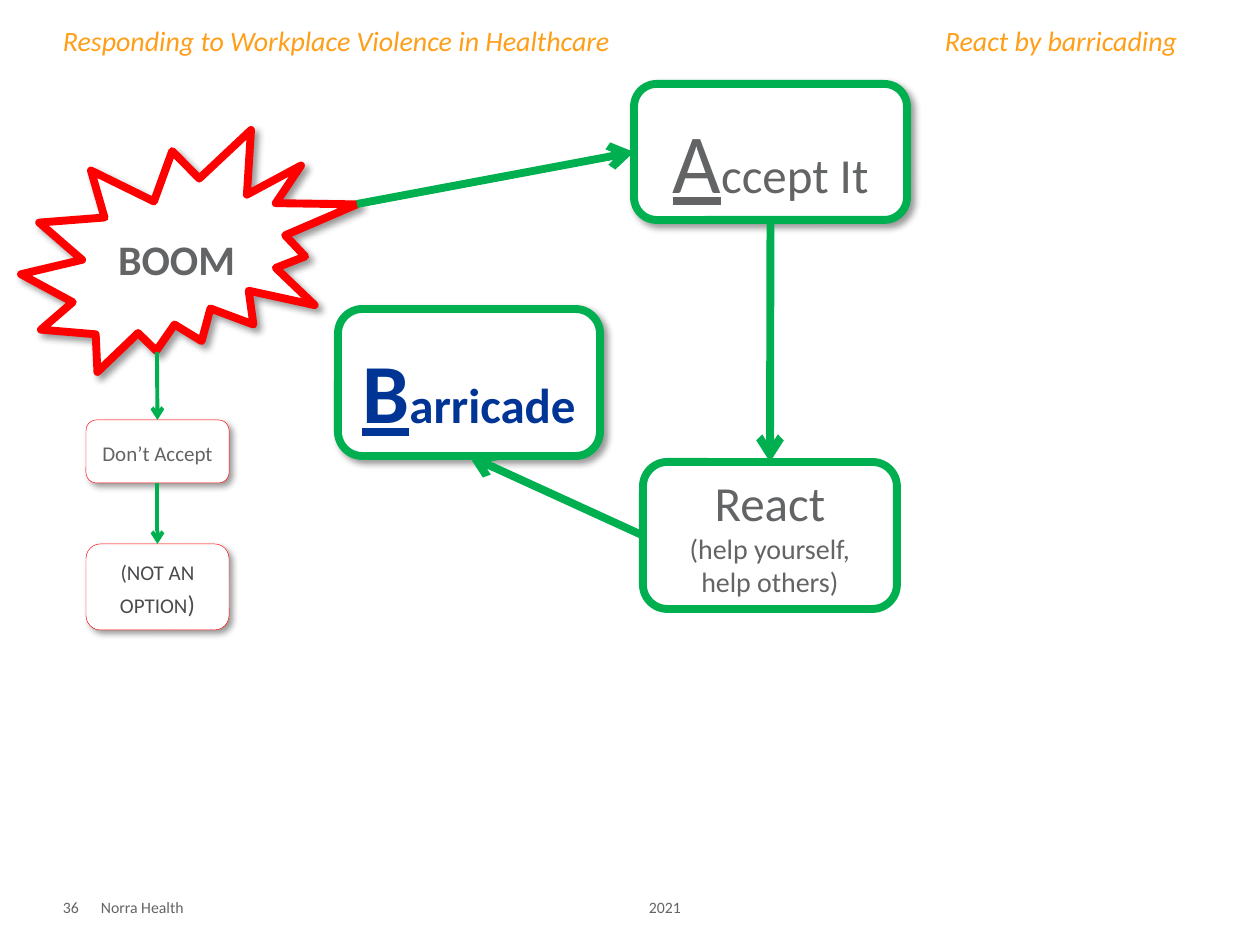
from lxml import etree
from pptx import Presentation
from pptx import util as u
from pptx.dml.color import RGBColor
from pptx.enum import shapes, text
from pptx.oxml import parse_xml
from pptx.oxml.ns import nsdecls, qn

THEME = dict(
    font="Calibri", white="FFFFFF", green="00B050", red="FF0000", grey="636466",
    dark="4A4B4D", blue="003595", orange="FF9F19",
    cap=48, head=28, boom=24, body=16, paren=14, small=12, foot=9,
    thick=4.5, medium=2.25, hair=0.25,
)
T = THEME
SHADOW = (
    f'<a:outerShdw {nsdecls("a")} blurRad="50800" dist="38100" dir="2700000" algn="tl" '
    'rotWithShape="0"><a:srgbClr val="000000"><a:alpha val="40000"/></a:srgbClr></a:outerShdw>'
)


def px(n):
    return u.Emu(round(n * 914400 / 126))


def add_runs(p, runs, color):
    for words, size, extra in runs:
        r = p.add_run()
        r.text = words
        r.font.color.rgb = RGBColor.from_string(T[color])
        for key, value in {"name": T["font"], "size": u.Pt(T[size]), **extra}.items():
            setattr(r.font, key, value)


prs = Presentation()
prs.slide_width, prs.slide_height = px(1260), px(945)
s = prs.slides.add_slide(prs.slide_layouts[6])

labels = [
    ((63, 24, 1134, 106), "Responding to Workplace Violence in Healthcare\tReact by barricading",
     "body", "orange", {"italic": True}, "TOP", 0),
    ((649, 892, 202, 25), "2021", "foot", "grey", {}, "BOTTOM", 0),
    ((101, 892, 504, 25), "Norra Health", "foot", "grey", {}, "MIDDLE", 6),
    ((63, 878, 63, 39), "36", "foot", "grey", {}, "BOTTOM", 0),
]
for box, words, size, color, extra, anchor, top in labels:
    tf = s.shapes.add_textbox(*map(px, box)).text_frame
    fmt = dict(word_wrap=True, vertical_anchor=text.MSO_ANCHOR[anchor], margin_left=0,
               margin_right=0, margin_top=px(top), margin_bottom=0)
    for key, value in fmt.items():
        setattr(tf, key, value)
    p = tf.paragraphs[0]
    if "\t" in words:
        tabs = etree.SubElement(p._p.get_or_add_pPr(), qn("a:tabLst"))
        etree.SubElement(tabs, qn("a:tab"), pos=str(px(882)), algn="l")
    add_runs(p, [(words, size, extra)], color)

B, U = {"bold": True}, {"underline": True}
steps = {
    "boom": ((21, 130, 336, 242), "red", "thick", "grey", [[("BOOM", "boom", B)]]),
    "accept": ((634, 84, 273, 136), "green", "thick", "grey",
               [[("A", "cap", U), ("ccept It", "head", {})]]),
    "deny": ((86, 420, 143, 63), "red", "hair", "grey", [[("Don’t Accept", "small", {})]]),
    "react": ((643, 462, 254, 147), "green", "thick", "grey",
              [[("React", "head", {})], [("(help yourself, help others)", "body", {})]]),
    "barricade": ((338, 309, 262, 147), "green", "thick", "blue",
                  [[("B", "cap", {**B, **U}), ("arricade", "head", B)]]),
    "option": ((86, 544, 143, 86), "red", "hair", "dark",
               [[("(NOT AN OPTION", "small", {}), (")", "paren", {})]]),
}
nodes = {}
for name, (box, line, width, color, paragraphs) in steps.items():
    kind = "EXPLOSION2" if name == "boom" else "ROUNDED_RECTANGLE"
    sp = nodes[name] = s.shapes.add_shape(shapes.MSO_SHAPE[kind], *map(px, box))
    sp.fill.solid()
    sp.fill.fore_color.rgb = RGBColor.from_string(T["white"])
    sp.line.color.rgb = RGBColor.from_string(T[line])
    sp.line.width = u.Pt(T[width])
    sp.shadow.inherit = False
    if name != "react":
        sp._element.spPr.find(qn("a:effectLst")).append(parse_xml(SHADOW))
    tf = sp.text_frame
    tf.vertical_anchor = text.MSO_ANCHOR.MIDDLE
    for i, runs in enumerate(paragraphs):
        p = tf.add_paragraph() if i else tf.paragraphs[0]
        p.alignment = text.PP_ALIGN.CENTER
        if name != "react":
            p.line_spacing, p.space_after = 1.15, u.Pt(10)
        add_runs(p, runs, color)

arrows = [
    ((357, 204), None, ("accept", 1), "thick"),
    ((157, 352), None, ("deny", 0), "medium"),
    ((157, 483), ("deny", 2), ("option", 0), "medium"),
    ((770, 220), ("accept", 2), ("react", 0), "thick"),
    ((643, 536), ("react", 1), ("barricade", 2), "thick"),
]
for start, source, target, width in arrows:
    x, y = map(px, start)
    cx = s.shapes.add_connector(shapes.MSO_CONNECTOR.STRAIGHT, x, y, x, y)
    if source:
        cx.begin_connect(nodes[source[0]], source[1])
    cx.end_connect(nodes[target[0]], target[1])
    cx.line.color.rgb = RGBColor.from_string(T["green"])
    cx.line.width = u.Pt(T[width])
    etree.SubElement(cx.line._get_or_add_ln(), qn("a:tailEnd"), type="arrow")
    etree.SubElement(cx._element.spPr, qn("a:effectLst"))

prs.save("out.pptx")
